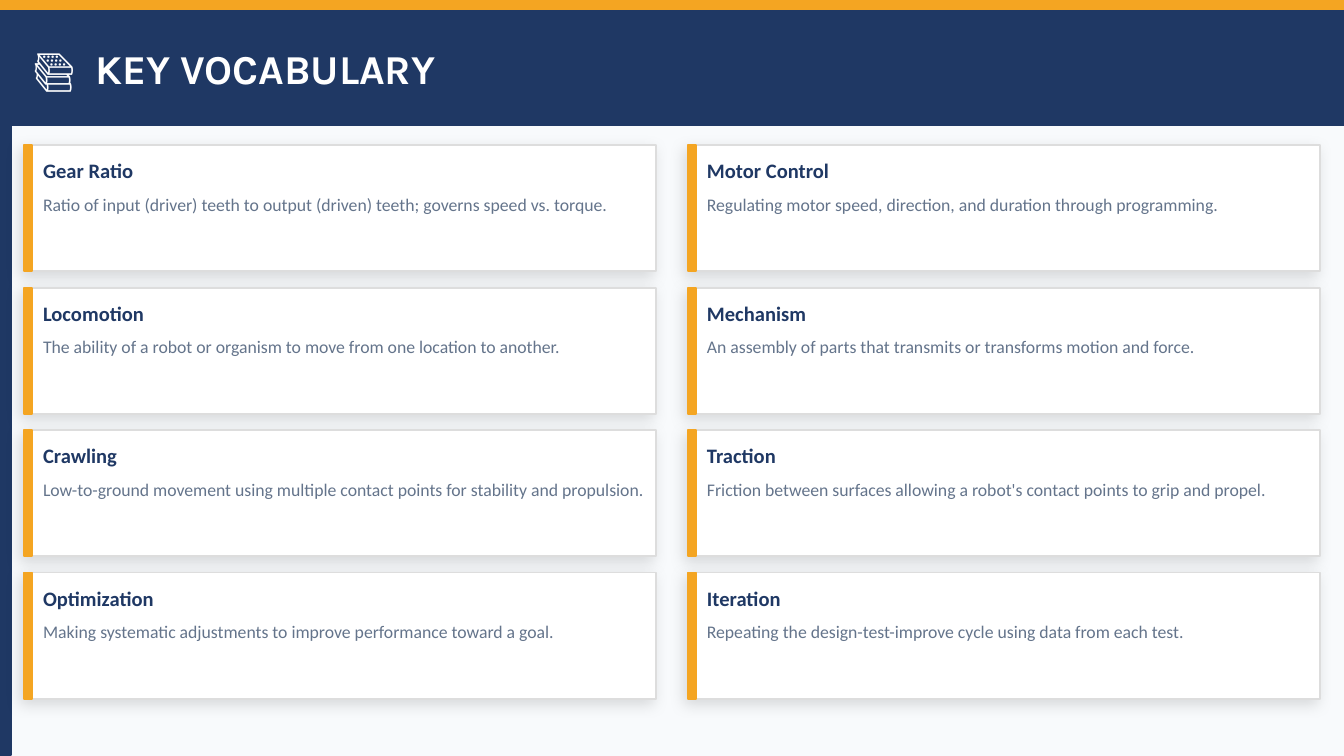
from lxml.etree import SubElement
from pptx import Presentation
from pptx.dml.color import RGBColor
from pptx.enum.shapes import MSO_SHAPE
from pptx.enum.text import MSO_ANCHOR
from pptx.oxml.ns import qn
from pptx.util import Inches, Pt

COLORS = {
    "background": "F8FAFC",
    "navy": "1F3864",
    "amber": "F4A522",
    "white": "FFFFFF",
    "border": "DDDDDD",
    "slate": "64748B",
    "shadow": "000000",
}

# One list of terms per column
VOCABULARY = [
    [
        ("Gear Ratio", "Ratio of input (driver) teeth to output (driven) teeth; governs speed vs. torque."),
        ("Locomotion", "The ability of a robot or organism to move from one location to another."),
        ("Crawling", "Low-to-ground movement using multiple contact points for stability and propulsion."),
        ("Optimization", "Making systematic adjustments to improve performance toward a goal."),
    ],
    [
        ("Motor Control", "Regulating motor speed, direction, and duration through programming."),
        ("Mechanism", "An assembly of parts that transmits or transforms motion and force."),
        ("Traction", "Friction between surfaces allowing a robot's contact points to grip and propel."),
        ("Iteration", "Repeating the design-test-improve cycle using data from each test."),
    ],
]


class VocabularyPage:
    heading_font = "Karla"
    body_font = "Calibri"
    card_width, card_height = 4.7, 0.94

    def __init__(self, deck):
        self.page = deck.slides.add_slide(deck.slide_layouts[6])
        fill = self.page.background.fill
        fill.solid()
        fill.fore_color.rgb = self.color("background")

    def color(self, name):
        return RGBColor.from_string(COLORS[name])

    def panel(self, left, top, width, height, fill, line=None):
        shape = self.page.shapes.add_shape(
            MSO_SHAPE.RECTANGLE, Inches(left), Inches(top), Inches(width), Inches(height))
        shape.shadow.inherit = False
        shape.fill.solid()
        shape.fill.fore_color.rgb = self.color(fill)
        shape.line.color.rgb = self.color(line or fill)
        shape.line.width = Pt(1)
        return shape

    def add_shadow(self, shape):
        effects = shape._element.spPr.find(qn("a:effectLst"))
        shadow = SubElement(effects, qn("a:outerShdw"), blurRad=str(Pt(8)), dist=str(Pt(3)),
                            dir=str(135 * 60000), algn="bl", rotWithShape="0")
        tint = SubElement(shadow, qn("a:srgbClr"), val=COLORS["shadow"])
        SubElement(tint, qn("a:alpha"), val="12000")

    def text(self, words, left, top, width, height, size, color,
             font=None, bold=False, anchor=MSO_ANCHOR.MIDDLE, tab=None):
        box = self.page.shapes.add_textbox(
            Inches(left), Inches(top), Inches(width), Inches(height))
        frame = box.text_frame
        frame.word_wrap = True
        frame.vertical_anchor = anchor
        frame.margin_left = frame.margin_right = frame.margin_top = frame.margin_bottom = 0
        para = frame.paragraphs[0]
        para.text = words
        if tab:
            stops = SubElement(para._p.get_or_add_pPr(), qn("a:tabLst"))
            SubElement(stops, qn("a:tab"), pos=str(Inches(tab)), algn="l")
        para.font.name = font or self.body_font
        para.font.size = Pt(size)
        para.font.bold = bold
        para.font.color.rgb = self.color(color)

    def card(self, left, top, term, meaning):
        self.add_shadow(self.panel(
            left, top, self.card_width, self.card_height, "white", "border"))
        self.panel(left, top, 0.06, self.card_height, "amber")
        text_left, text_width = left + 0.14, self.card_width - 0.22
        self.text(term, text_left, top + 0.04, text_width, 0.3, 11, "navy", bold=True)
        self.text(meaning, text_left, top + 0.36, text_width, 0.52, 9.5, "slate",
                  anchor=MSO_ANCHOR.TOP)


def main():
    # Widescreen page, 16:9
    deck = Presentation()
    deck.slide_width = Inches(10)
    deck.slide_height = Inches(10 * 9 / 16)
    vocabulary = VocabularyPage(deck)

    # Top stripe, side stripe and header band
    vocabulary.panel(0, 0, 10, 0.08, "amber")
    vocabulary.panel(0, 0.08, 0.08, 5.54, "navy")
    vocabulary.panel(0.08, 0.08, 9.92, 0.85, "navy")
    vocabulary.text("📚\tKEY VOCABULARY", 0.25, 0.08, 9.5, 0.85, 22, "white",
                    font=vocabulary.heading_font, bold=True, tab=0.46)

    # Two columns of term cards
    for column, terms in enumerate(VOCABULARY):
        for row, (term, meaning) in enumerate(terms):
            vocabulary.card(0.18 + column * 4.94, 1.08 + row * 1.06, term, meaning)

    deck.save("out.pptx")


if __name__ == "__main__":
    main()
